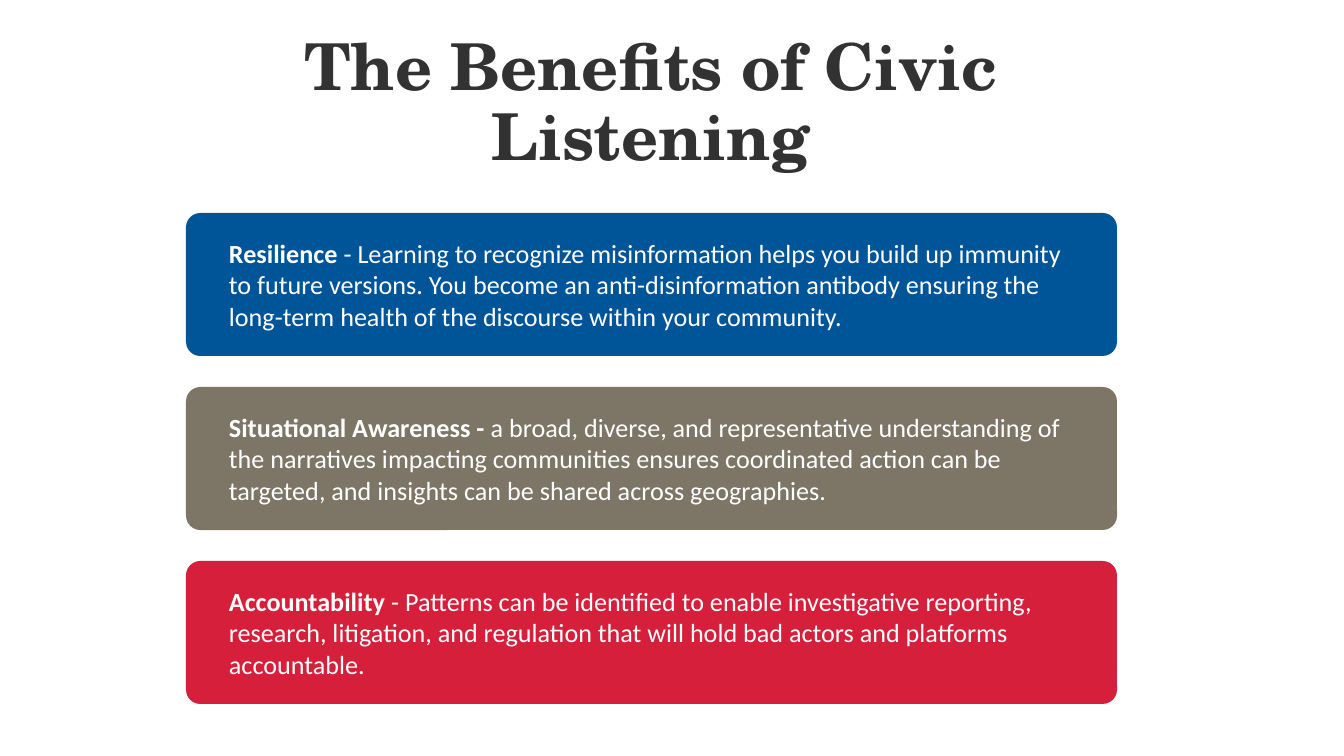
from pptx import Presentation
from pptx.dml.color import RGBColor
from pptx.enum.shapes import MSO_SHAPE
from pptx.enum.text import MSO_ANCHOR, PP_ALIGN
from pptx.util import Emu, Pt

ROUNDED = MSO_SHAPE.ROUNDED_RECTANGLE
MIDDLE, BOTTOM = MSO_ANCHOR.MIDDLE, MSO_ANCHOR.BOTTOM
LEFT, CENTER = PP_ALIGN.LEFT, PP_ALIGN.CENTER

EMU_PER_PX = 914400 / 134.4

WHITE = RGBColor(0xFF, 0xFF, 0xFF)
CHARCOAL = RGBColor(0x32, 0x32, 0x32)
BLUE = RGBColor(0x00, 0x54, 0x98)
TAUPE = RGBColor(0x7D, 0x76, 0x67)
RED = RGBColor(0xD5, 0x1F, 0x3B)

TITLE_FONT, BODY_FONT = "TeX Gyre Schola", "Calibri"

# Card layout in px
CARD_LEFT, CARD_TOP, CARD_WIDTH, CARD_HEIGHT = 186, 213, 931, 143
CARD_PITCH = 174
TEXT_LEFT, TEXT_WIDTH, TEXT_INSET = 214, 887, 15

# Fill, bold lead, explanation
BENEFITS = [
    (BLUE, "Resilience",
     " - Learning to recognize misinformation helps you build up immunity "
     "to future versions. You become an anti-disinformation antibody ensuring "
     "the long-term health of the discourse within your community."),
    (TAUPE, "Situational Awareness - ",
     "a broad, diverse, and representative understanding of the narratives "
     "impacting communities ensures coordinated action can be targeted, "
     "and insights can be shared across geographies."),
    (RED, "Accountability ",
     "- Patterns can be identified to enable investigative reporting, "
     "research, litigation, and regulation that will hold bad actors and "
     "platforms accountable."),
]


def px(length):
    return Emu(round(length * EMU_PER_PX))


def add_text(slide, box, anchor, alignment, insets):
    """Add an empty wrapping text box and return its paragraph."""
    text_frame = slide.shapes.add_textbox(*map(px, box)).text_frame
    text_frame.word_wrap = True
    text_frame.vertical_anchor = anchor
    horizontal, vertical = map(px, insets)
    text_frame.margin_left = text_frame.margin_right = horizontal
    text_frame.margin_top = text_frame.margin_bottom = vertical
    paragraph = text_frame.paragraphs[0]
    paragraph.alignment = alignment
    return paragraph


def add_run(paragraph, text, font_name, size, color, bold):
    run = paragraph.add_run()
    run.text = text
    run.font.name = font_name
    run.font.size = Pt(size)
    run.font.bold = bold
    run.font.color.rgb = color


def add_title(slide):
    paragraph = add_text(slide, (134, 35, 1034, 146), BOTTOM, CENTER, (13, 7))
    paragraph.line_spacing = 0.9
    add_run(paragraph, "The Benefits of Civic Listening",
            TITLE_FONT, 34.6, CHARCOAL, True)


def add_card(slide, top, fill, lead, explanation):
    card = slide.shapes.add_shape(
        ROUNDED, px(CARD_LEFT), px(top), px(CARD_WIDTH), px(CARD_HEIGHT))
    card.adjustments[0] = 0.1
    card.shadow.inherit = False
    card.fill.solid()
    card.fill.fore_color.rgb = fill
    card.line.fill.background()

    paragraph = add_text(slide, (TEXT_LEFT, top, TEXT_WIDTH, CARD_HEIGHT),
                         MIDDLE, LEFT, (TEXT_INSET, TEXT_INSET))
    add_run(paragraph, lead, BODY_FONT, 14, WHITE, True)
    add_run(paragraph, explanation, BODY_FONT, 14, WHITE, False)


def main():
    presentation = Presentation()
    presentation.slide_width, presentation.slide_height = px(1344), px(756)
    slide = presentation.slides.add_slide(presentation.slide_layouts[6])

    add_title(slide)

    # Evenly spaced benefit cards
    for index, benefit in enumerate(BENEFITS):
        add_card(slide, CARD_TOP + index * CARD_PITCH, *benefit)

    presentation.save("out.pptx")


if __name__ == "__main__":
    main()
